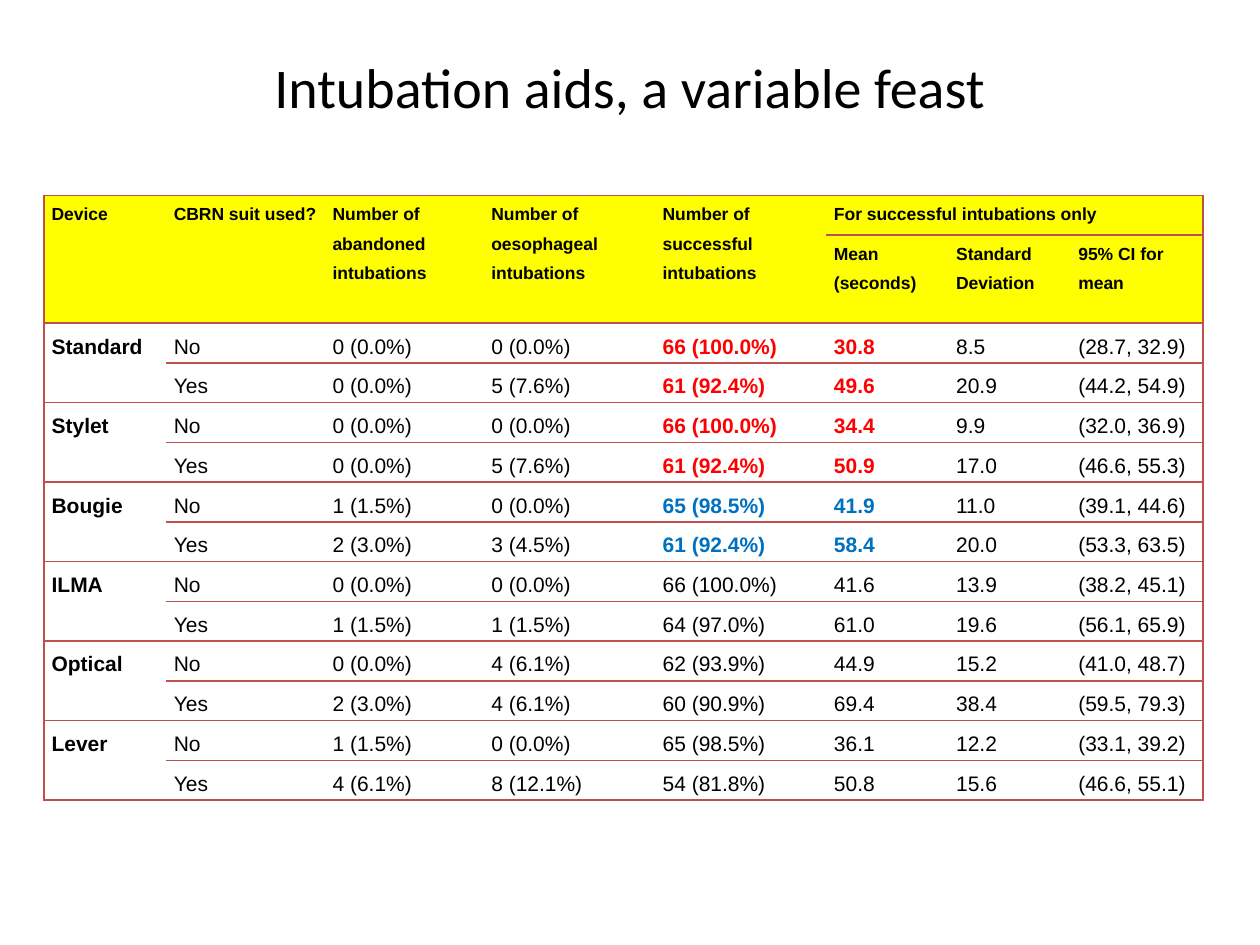
"""Build a slide with a table comparing intubation aids."""
from lxml.etree import SubElement
from pptx import Presentation
from pptx.dml.color import RGBColor
from pptx.enum.text import MSO_ANCHOR, PP_ALIGN
from pptx.oxml.ns import qn
from pptx.util import Inches, Pt

BLACK, RED, BLUE, YELLOW, RULE = "000000", "FF0000", "0070C0", "FFFF00", "C0504D"
PLAIN_TABLE_STYLE = "{2D5ABB26-0587-4C30-8999-92F81FD0307C}"
COLUMN_WIDTHS = [0.97, 1.26, 1.26, 1.36, 1.36, 0.97, 0.97, 1.05]
ROW_HEIGHT, SUBHEADER_HEIGHT = 4.1 / 13, 0.7
HEADERS = ["Device", "CBRN suit used?", "Number of abandoned intubations",
           "Number of oesophageal intubations", "Number of successful intubations",
           "For successful intubations only"]
SUBHEADERS = ["Mean (seconds)", "Standard Deviation", "95% CI for mean"]
DEVICES = [
    ("Standard", RED,
     ["No", "0 (0.0%)", "0 (0.0%)", "66 (100.0%)", "30.8", "8.5", "(28.7, 32.9)"],
     ["Yes", "0 (0.0%)", "5 (7.6%)", "61 (92.4%)", "49.6", "20.9", "(44.2, 54.9)"]),
    ("Stylet", RED,
     ["No", "0 (0.0%)", "0 (0.0%)", "66 (100.0%)", "34.4", "9.9", "(32.0, 36.9)"],
     ["Yes", "0 (0.0%)", "5 (7.6%)", "61 (92.4%)", "50.9", "17.0", "(46.6, 55.3)"]),
    ("Bougie", BLUE,
     ["No", "1 (1.5%)", "0 (0.0%)", "65 (98.5%)", "41.9", "11.0", "(39.1, 44.6)"],
     ["Yes", "2 (3.0%)", "3 (4.5%)", "61 (92.4%)", "58.4", "20.0", "(53.3, 63.5)"]),
    ("ILMA", None,
     ["No", "0 (0.0%)", "0 (0.0%)", "66 (100.0%)", "41.6", "13.9", "(38.2, 45.1)"],
     ["Yes", "1 (1.5%)", "1 (1.5%)", "64 (97.0%)", "61.0", "19.6", "(56.1, 65.9)"]),
    ("Optical", None,
     ["No", "0 (0.0%)", "4 (6.1%)", "62 (93.9%)", "44.9", "15.2", "(41.0, 48.7)"],
     ["Yes", "2 (3.0%)", "4 (6.1%)", "60 (90.9%)", "69.4", "38.4", "(59.5, 79.3)"]),
    ("Lever", None,
     ["No", "1 (1.5%)", "0 (0.0%)", "65 (98.5%)", "36.1", "12.2", "(33.1, 39.2)"],
     ["Yes", "4 (6.1%)", "8 (12.1%)", "54 (81.8%)", "50.8", "15.6", "(46.6, 55.1)"]),
]


def write(frame, text, size=12, font="Arial", color=BLACK, bold=False,
          align=PP_ALIGN.LEFT, spacing=1.5):
    paragraph = frame.paragraphs[0]
    paragraph.alignment, paragraph.line_spacing = align, spacing
    run = paragraph.add_run()
    run.text = text
    run.font.size, run.font.name, run.font.bold = Pt(size), font, bold
    run.font.color.rgb = RGBColor.from_string(color)


def draw_borders(cell, sides):
    properties = cell._tc.get_or_add_tcPr()
    for position, side in enumerate(sides):
        line = SubElement(properties, qn(f"a:ln{side}"), w=str(Pt(1)))
        fill = SubElement(line, qn("a:solidFill"))
        SubElement(fill, qn("a:srgbClr"), val=RULE)
        properties.remove(line)
        properties.insert(position, line)


presentation = Presentation()
presentation.slide_width, presentation.slide_height = Inches(10), Inches(7.5)
slide = presentation.slides.add_slide(presentation.slide_layouts[5])

title = slide.shapes.title
title.left, title.top, title.width, title.height = map(Inches, (0.5, 0.3, 9, 0.77))
title.text_frame.vertical_anchor = MSO_ANCHOR.MIDDLE
write(title.text_frame, "Intubation aids, a variable feast", size=32, font="Calibri",
      align=PP_ALIGN.CENTER, spacing=1)

row_count, column_count = 2 + 2 * len(DEVICES), len(COLUMN_WIDTHS)
row_heights = [ROW_HEIGHT, SUBHEADER_HEIGHT] + [ROW_HEIGHT] * (row_count - 2)
table_shape = slide.shapes.add_table(
    row_count, column_count, Inches(0.35), Inches(1.55),
    Inches(sum(COLUMN_WIDTHS)), Inches(sum(row_heights)))
table = table_shape.table
table.first_row = table.horz_banding = False
table._tbl.tblPr.find(qn("a:tableStyleId")).text = PLAIN_TABLE_STYLE
for column, width in zip(table.columns, COLUMN_WIDTHS):
    column.width = Inches(width)
for row, height in zip(table.rows, row_heights):
    row.height = Inches(height)

for row in range(row_count):
    for column in range(column_count):
        cell = table.cell(row, column)
        cell.margin_left = cell.margin_right = Inches(0.06)
        cell.margin_top = cell.margin_bottom = 0
        if row < 2:
            cell.fill.solid()
            cell.fill.fore_color.rgb = RGBColor.from_string(YELLOW)
        else:
            cell.fill.background()
        tall = column == 0 or (row < 2 and column < 5)
        sides = ["L"] * (column == 0) + ["R"] * (column == column_count - 1)
        sides += ["T"] * (not tall or row % 2 == 0) + ["B"] * (not tall or row % 2 == 1)
        if tall and row % 2 == 0:
            sides.append("B")
            cell.merge(table.cell(row + 1, column))
        draw_borders(cell, sides)

table.cell(0, 5).merge(table.cell(0, 7))
draw_borders(table.cell(0, 5), ["R"])
for column, header in enumerate(HEADERS):
    write(table.cell(0, column).text_frame, header, size=10, bold=True)
for column, header in enumerate(SUBHEADERS, 5):
    write(table.cell(1, column).text_frame, header, size=10, bold=True)

for index, (device, highlight, *results) in enumerate(DEVICES):
    first_row = 2 + 2 * index
    write(table.cell(first_row, 0).text_frame, device, bold=True)
    for row, values in enumerate(results, first_row):
        for column, value in enumerate(values, 1):
            marked = highlight is not None and column in (4, 5)
            write(table.cell(row, column).text_frame, value, bold=marked,
                  color=highlight if marked else BLACK)

presentation.save("out.pptx")
